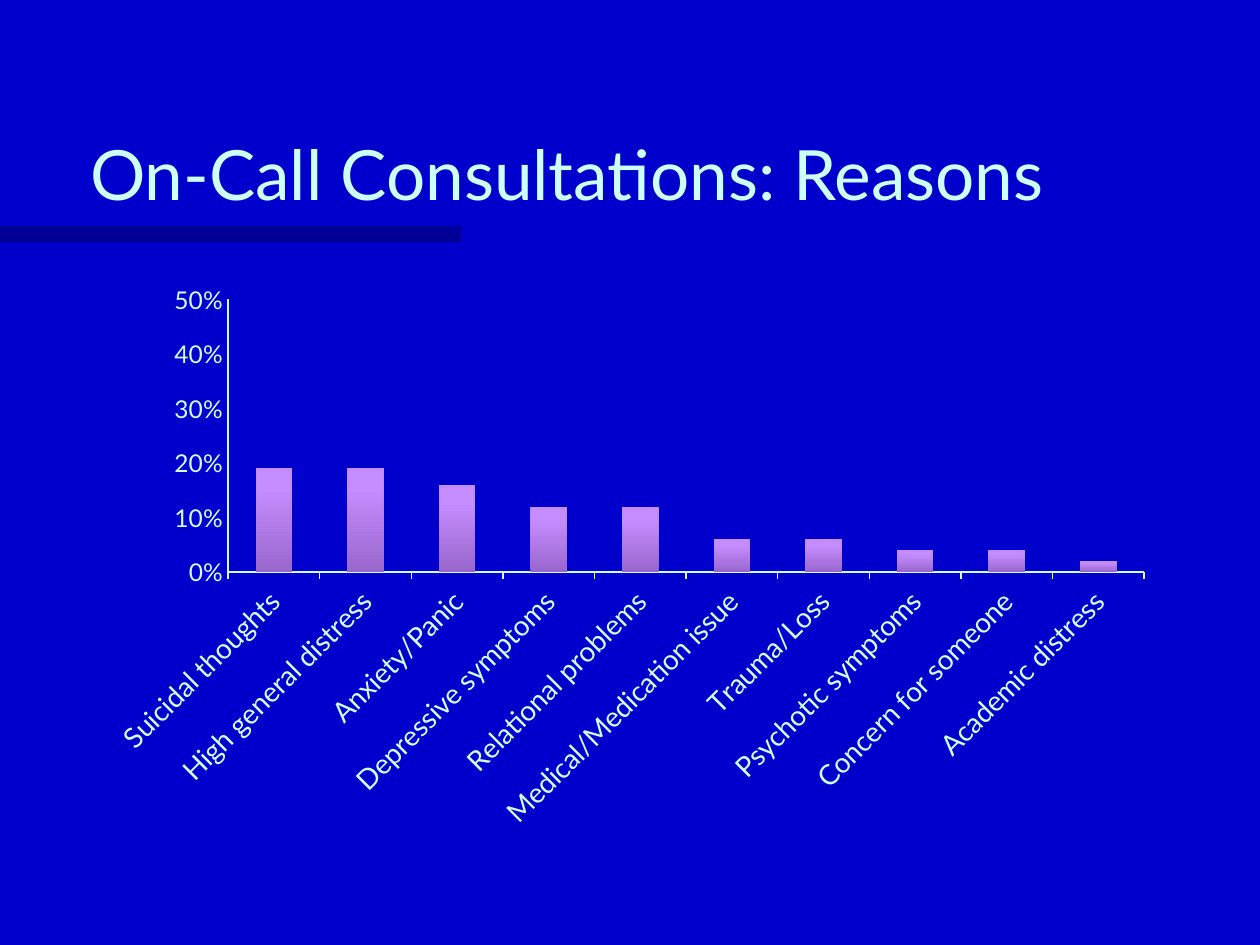
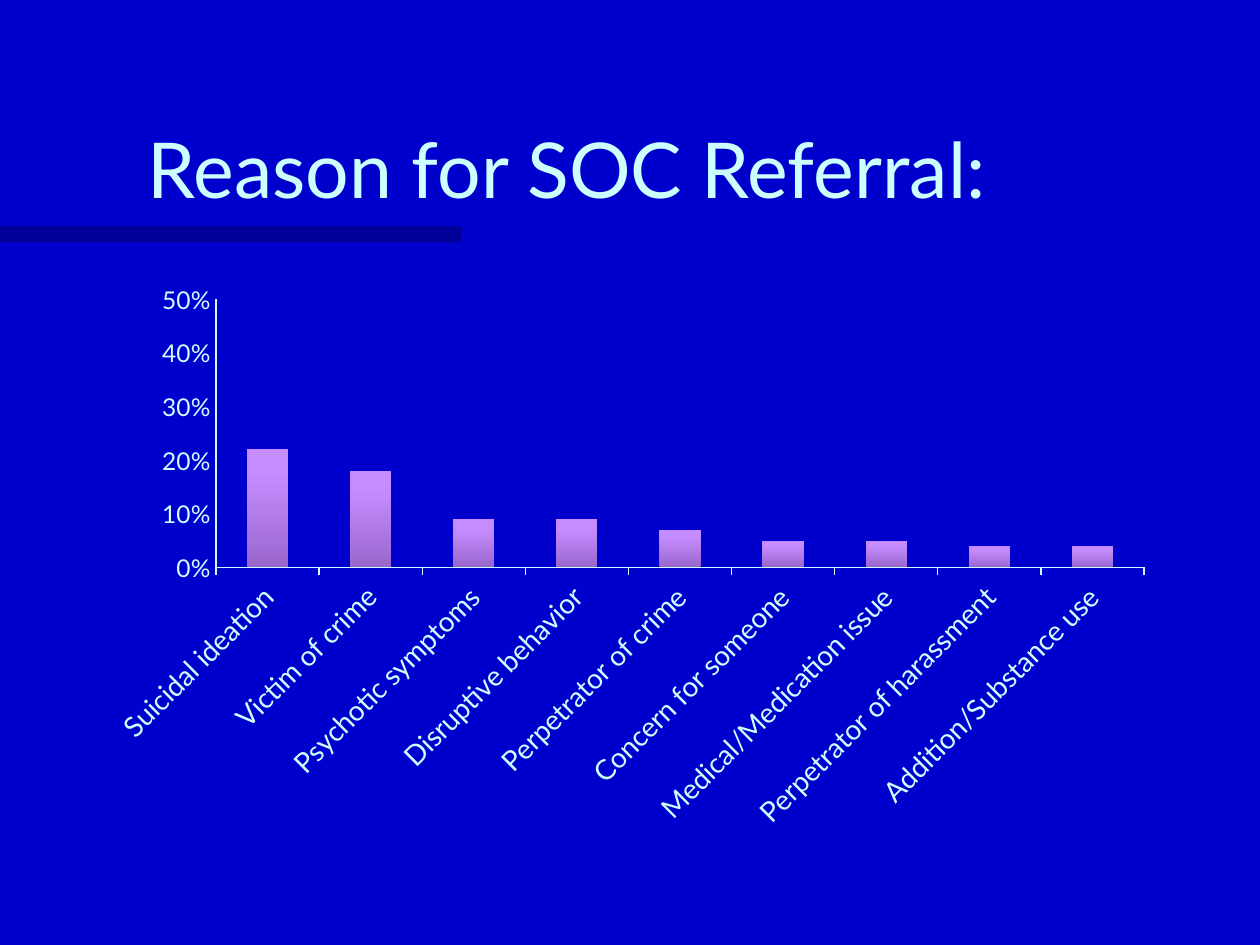
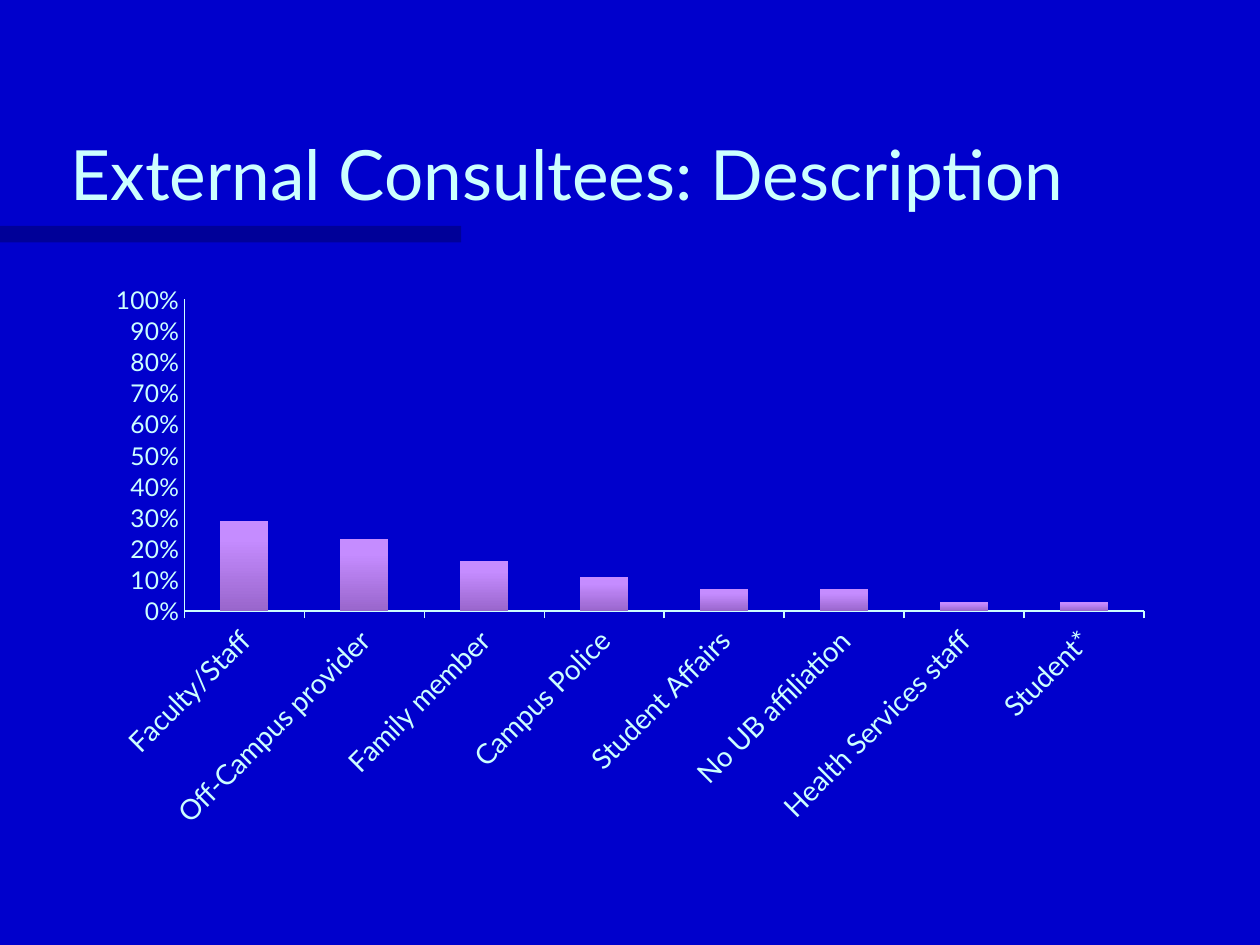
"""Three slides of column charts on consultations and referrals."""
from pptx import Presentation
from pptx.chart.data import CategoryChartData as ChartData
from pptx.dml.color import RGBColor as RGB
from pptx.enum.chart import XL_CHART_TYPE as CT, XL_TICK_MARK as TM
from pptx.enum.shapes import MSO_SHAPE as SHAPE
from pptx.enum.text import MSO_ANCHOR as ANCHOR, MSO_AUTO_SIZE as AUTO, PP_ALIGN as ALIGN
from pptx.oxml.ns import qn
from pptx.util import Pt
from lxml.etree import SubElement

COLORS = {"back": "0000CC", "band": "000066", "text": "CCFFFF",
          "chart": "CCECFF", "bar_top": "C58CFF", "bar_foot": "9966CC"}
FONT = "Lato"
SLIDES = [
    ("On-Call Consultations: Reasons", 39.6, 0.5, {
        "Suicidal thoughts": 0.19, "High general distress": 0.19, "Anxiety/Panic": 0.16,
        "Depressive symptoms": 0.12, "Relational problems": 0.12,
        "Medical/Medication issue": 0.06, "Trauma/Loss": 0.06,
        "Psychotic symptoms": 0.04, "Concern for someone": 0.04, "Academic distress": 0.02}),
    ("Reason for SOC Referral:", 44, 0.5, {
        "Suicidal ideation": 0.22, "Victim of crime": 0.18, "Psychotic symptoms": 0.09,
        "Disruptive behavior": 0.09, "Perpetrator of crime": 0.07,
        "Concern for someone": 0.05, "Medical/Medication issue": 0.05,
        "Perpetrator of harassment": 0.04, "Addition/Substance use": 0.04}),
    ("External Consultees: Description", 39.6, 1, {
        "Faculty/Staff": 0.29, "Off-Campus provider": 0.23, "Family member": 0.16,
        "Campus Police": 0.11, "Student Affairs": 0.07, "No UB affiliation": 0.07,
        "Health Services staff": 0.03, "Student*": 0.03}),
]


def set_all(obj, **values):
    for name, value in values.items():
        setattr(obj, name, value)


def set_font(font, size, color):
    set_all(font, name=FONT, size=Pt(size), bold=False)
    font.color.rgb = RGB.from_string(COLORS[color])


prs = Presentation()
set_all(prs, slide_width=Pt(720), slide_height=Pt(540))
master = prs.slide_master
master.background.fill.solid()
master.background.fill.fore_color.rgb = RGB.from_string(COLORS["back"])
layout = prs.slide_layouts.get_by_name("Title Only")
set_all(layout.placeholders[0], left=Pt(18), top=Pt(36), width=Pt(612), height=Pt(90))

for title, size, top_value, reasons in SLIDES:
    s = prs.slides.add_slide(layout)
    tf = s.shapes.title.text_frame
    set_all(tf, text=title, vertical_anchor=ANCHOR.BOTTOM, auto_size=AUTO.NONE, word_wrap=True)
    p = tf.paragraphs[0]
    p.alignment = ALIGN.CENTER
    set_font(p.runs[0].font, size, "text")

    data = ChartData(number_format="0%")
    data.categories = list(reasons)
    data.add_series("Series 1", list(reasons.values()))
    chart = s.shapes.add_chart(CT.COLUMN_CLUSTERED, Pt(54), Pt(156), Pt(612), Pt(324), data).chart
    set_all(chart, has_legend=False, has_title=False)
    set_font(chart.font, 18, "chart")

    plot = chart.plots[0]
    set_all(plot, gap_width=150, vary_by_categories=False)
    fill = plot.series[0].format.fill
    fill.gradient()
    fill.gradient_angle = 90
    for stop, position, color in zip(fill.gradient_stops, (0, 0.8), ("bar_foot", "bar_top")):
        stop.position = position
        stop.color.rgb = RGB.from_string(COLORS[color])

    cat, val = chart.category_axis, chart.value_axis
    for axis, size, mark in ((cat, 16, TM.OUTSIDE), (val, 14, TM.NONE)):
        set_all(axis, has_major_gridlines=False, major_tick_mark=mark, minor_tick_mark=TM.NONE)
        set_font(axis.tick_labels.font, size, "text")
        axis.format.line.width = Pt(0.75)
        axis.format.line.color.rgb = RGB.from_string(COLORS["text"])
    set_all(val, minimum_scale=0, maximum_scale=top_value, major_unit=0.1)
    set_all(val.tick_labels, number_format="0%", number_format_is_linked=False)
    chart.element.xpath(".//c:catAx/c:txPr/a:bodyPr")[0].set("rot", "-2700000")

band = s.shapes.add_shape(SHAPE.RECTANGLE, Pt(0), Pt(129), Pt(263.5), Pt(9.5))
band.shadow.inherit = False
band.line.fill.background()
band.fill.solid()
band.fill.fore_color.rgb = RGB.from_string(COLORS["band"])
SubElement(next(band.element.iter(qn("a:srgbClr"))), qn("a:alpha"), val="50000")
band.element.nvSpPr.cNvPr.set("id", "20")
master.shapes.element.insert(2, band.element)

prs.save("out.pptx")
